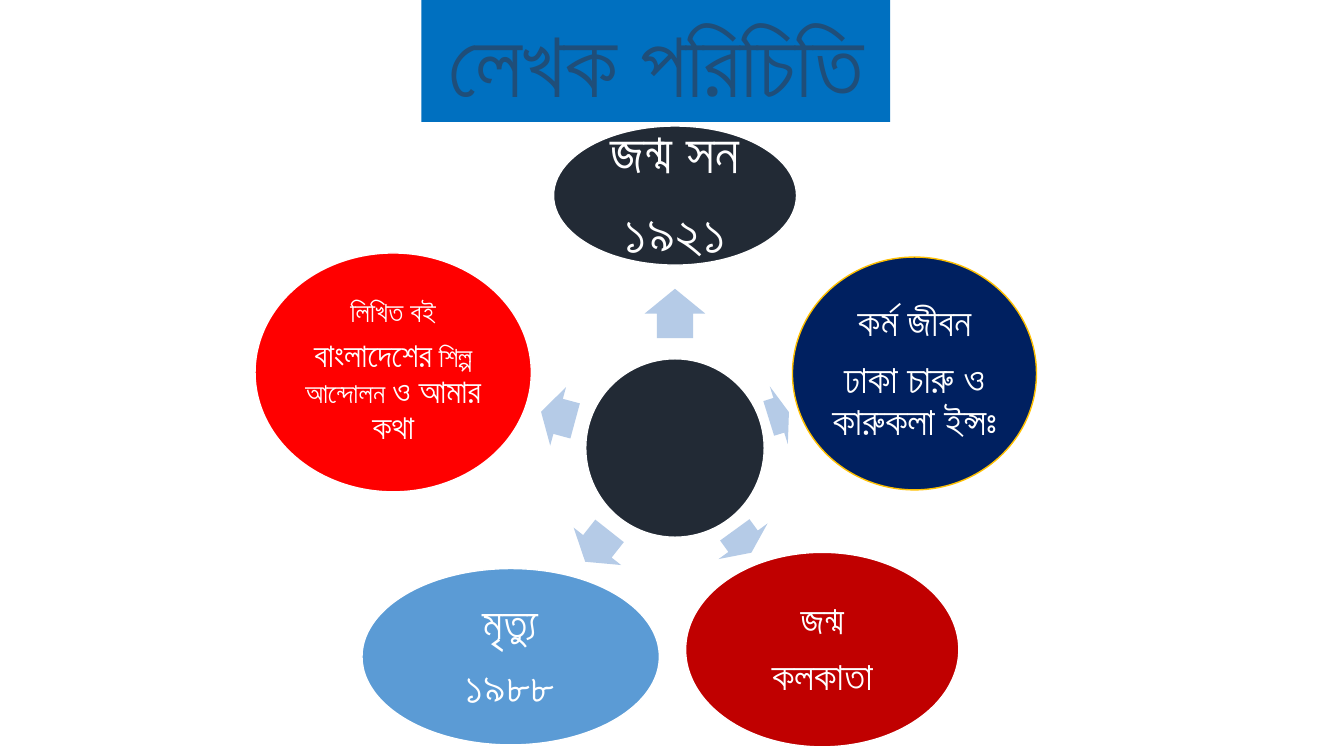
from typing import NamedTuple

from pptx import Presentation
from pptx.dml.color import RGBColor
from pptx.enum.shapes import MSO_SHAPE
from pptx.enum.text import MSO_ANCHOR, PP_ALIGN
from pptx.util import Pt

RECTANGLE = MSO_SHAPE.RECTANGLE
ELLIPSE = MSO_SHAPE.OVAL
ARROW = MSO_SHAPE.RIGHT_ARROW
CENTER = PP_ALIGN.CENTER
MIDDLE = MSO_ANCHOR.MIDDLE
TOP = MSO_ANCHOR.TOP

PX = 9144  # 100 px to the inch
FONT = "Calibri"
COLORS = {
    "white": "FFFFFF",
    "title fill": "0070C0",
    "title text": "1F4E79",
    "dark": "222A35",
    "arrow": "B5CBE7",
    "navy": "002060",
    "gold": "FFC000",
    "crimson": "C00000",
    "blue": "5B9BD5",
    "red": "FF0000",
}


class Box(NamedTuple):
    left: int
    top: int
    width: int
    height: int


class Span(NamedTuple):
    text: str
    size: int


class Arrow(NamedTuple):
    box: Box
    angle: float


class Fact(NamedTuple):
    box: Box
    fill: str
    inset: int
    paragraphs: list[list[Span]]
    line: str = "white"


TITLE_BOX = Box(418, 0, 465, 121)
HUB_BOX = Box(581, 356, 177, 177)

ARROWS = [
    Arrow(Box(645, 281, 49, 60), 270),
    Arrow(Box(762, 382, 21, 60), 342.7),
    Arrow(Box(723, 507, 28, 60), 54),
    Arrow(Box(573, 512, 39, 60), 128.3),
    Arrow(Box(536, 383, 35, 60), 195.1),
]

FACTS = [
    Fact(Box(549, 125, 241, 138), "dark", 6,
         [[Span("জন্ম সন", 40)], [Span("১৯২১", 40)]]),
    Fact(Box(786, 255, 242, 231), "navy", 4,
         [[Span("কর্ম জীবন", 28)], [Span("ঢাকা চারু ও কারুকলা ইন্সঃ", 28)]], "gold"),
    Fact(Box(680, 548, 271, 193), "crimson", 4,
         [[Span("জন্ম", 28)], [Span("কলকাতা", 28)]]),
    Fact(Box(359, 564, 295, 175), "blue", 4,
         [[Span("মৃত্যু", 32)], [Span("১৯৮৮", 32)]]),
    Fact(Box(253, 251, 274, 237), "red", 3,
         [[Span("লিখিত বই", 20)],
          [Span("বাংলাদেশের", 24), Span(" শিল্প আন্দোলন ", 20), Span("ও আমার কথা", 24)]]),
]


def rgb(name: str) -> RGBColor:
    return RGBColor.from_string(COLORS[name])


def add_shape(page, kind, box: Box, fill: str, line: str | None = None):
    shape = page.shapes.add_shape(kind, *(length * PX for length in box))
    shape.shadow.inherit = False
    shape.fill.solid()
    shape.fill.fore_color.rgb = rgb(fill)
    if line:
        shape.line.color.rgb = rgb(line)
        shape.line.width = Pt(1)
    else:
        shape.line.fill.background()
    return shape


def write_spans(para, spans: list[Span], color: str) -> None:
    para.alignment = CENTER
    for span in spans:
        run = para.add_run()
        run.text = span.text
        run.font.name = FONT
        run.font.size = Pt(span.size)
        run.font.color.rgb = rgb(color)


def add_title(page) -> None:
    frame = add_shape(page, RECTANGLE, TITLE_BOX, "title fill").text_frame
    frame.word_wrap = True
    frame.vertical_anchor = TOP
    write_spans(frame.paragraphs[0], [Span("লেখক পরিচিতি", 66)], "title text")


def add_arrow(page, arrow: Arrow) -> None:
    shape = add_shape(page, ARROW, arrow.box, "arrow")
    shape.rotation = arrow.angle
    shape.adjustments[0] = 0.6
    shape.adjustments[1] = 0.5


def add_fact(page, fact: Fact) -> None:
    frame = add_shape(page, ELLIPSE, fact.box, fact.fill, fact.line).text_frame
    frame.word_wrap = True
    frame.vertical_anchor = MIDDLE
    frame.margin_left = frame.margin_right = fact.inset * PX
    frame.margin_top = frame.margin_bottom = fact.inset * PX
    for index, spans in enumerate(fact.paragraphs):
        para = frame.add_paragraph() if index else frame.paragraphs[0]
        para.line_spacing = 0.9
        para.space_after = Pt(0.35 * spans[0].size)
        write_spans(para, spans, "white")


def main() -> None:
    deck = Presentation()
    deck.slide_width = 1333 * PX
    deck.slide_height = 750 * PX
    page = deck.slides.add_slide(deck.slide_layouts[6])

    # Title banner
    add_title(page)

    # Hub with arrows pointing to the facts around it
    add_shape(page, ELLIPSE, HUB_BOX, "dark", "white")
    for arrow in ARROWS:
        add_arrow(page, arrow)

    # Facts about the author
    for fact in FACTS:
        add_fact(page, fact)

    deck.save("out.pptx")


if __name__ == "__main__":
    main()
